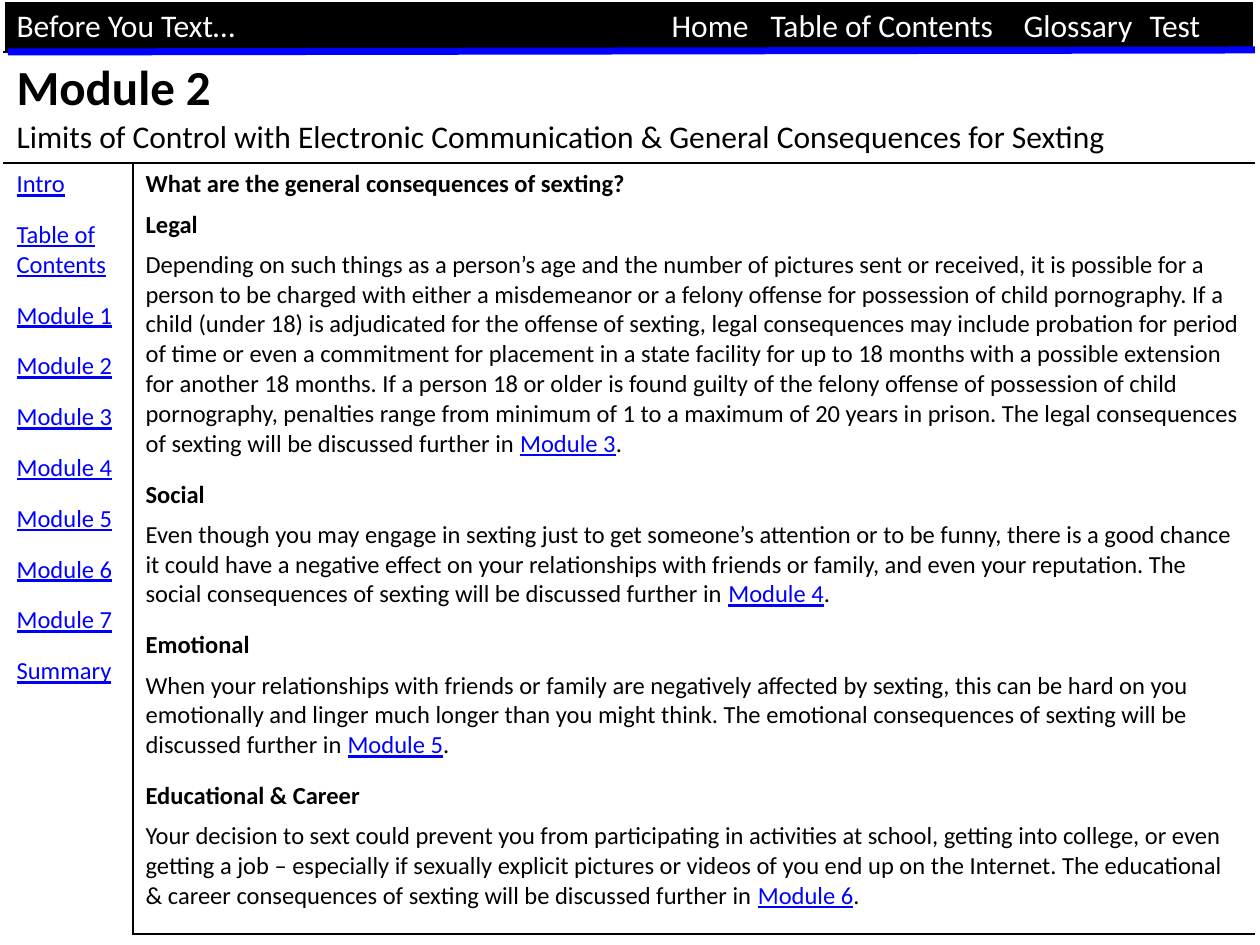
from lxml import etree
from pptx import Presentation
from pptx.dml.color import RGBColor
from pptx.enum.shapes import MSO_CONNECTOR
from pptx.oxml.ns import qn
from pptx.util import Pt

PX = 914400 // 126
STRAIGHT = MSO_CONNECTOR.STRAIGHT
BLACK = RGBColor(0, 0, 0)
WHITE = RGBColor(255, 255, 255)
BLUE = RGBColor(0, 0, 255)
FONT = "Calibri"

COLUMN_WIDTHS = (129, 1121)
ROW_HEIGHTS = (49, 106, 771)
HEADER = ("Before You Text…", "Home", "Table of Contents", "Glossary", "Test")
HEADER_STOPS = (655, 754, 1007, 1133)
SUBTITLE = "Limits of Control with Electronic Communication & General Consequences for Sexting"
MENU = ["Intro", "Table of Contents", *(f"Module {n}" for n in range(1, 8)), "Summary"]
QUESTION = "What are the general consequences of sexting?"
SECTIONS = (
    ("Legal", 6,
     "Depending on such things as a person’s age and the number of pictures sent or received, "
     "it is possible for a person to be charged with either a misdemeanor or a felony offense "
     "for possession of child pornography. If a child (under 18) is adjudicated for the offense "
     "of sexting, legal consequences may include probation for period of time or even a "
     "commitment for placement in a state facility for up to 18 months with a possible extension "
     "for another 18 months. If a person 18 or older is found guilty of the felony offense of "
     "possession of child pornography, penalties range from minimum of 1 to a maximum of 20 years "
     "in prison. The legal consequences of sexting will be discussed further in ", "Module 3"),
    ("Social", 12,
     "Even though you may engage in sexting just to get someone’s attention or to be funny, there "
     "is a good chance it could have a negative effect on your relationships with friends or "
     "family, and even your reputation. The social consequences of sexting will be discussed "
     "further in ", "Module 4"),
    ("Emotional", 12,
     "When your relationships with friends or family are negatively affected by sexting, this can "
     "be hard on you emotionally and linger much longer than you might think. The emotional "
     "consequences of sexting will be discussed further in ", "Module 5"),
    ("Educational & Career", 12,
     "Your decision to sext could prevent you from participating in activities at school, getting "
     "into college, or even getting a job – especially if sexually explicit pictures or videos of "
     "you end up on the Internet. The educational & career consequences of sexting will be "
     "discussed further in ", "Module 6"),
)


def px(length):
    return length * PX


def add_text(paragraph, text, size=14, color=BLACK, bold=False, underline=False):
    run = paragraph.add_run()
    run.text = text
    font = run.font
    font.name, font.size, font.bold, font.underline = FONT, Pt(size), bold, underline
    font.color.rgb = color


def add_link(paragraph, text):
    add_text(paragraph, text, color=BLUE, underline=True)


def next_paragraph(cell, space_before):
    paragraph = cell.text_frame.add_paragraph()
    paragraph.space_before = Pt(space_before)
    return paragraph


def set_tab_stops(paragraph, stops):
    properties = paragraph._p.get_or_add_pPr()
    tab_list = etree.SubElement(properties, qn("a:tabLst"))
    for stop in stops:
        etree.SubElement(tab_list, qn("a:tab"), pos=str(px(stop)), algn="l")


def set_borders(cell, left, right, top, bottom):
    properties = cell._tc.get_or_add_tcPr()
    sides = zip(("a:lnL", "a:lnR", "a:lnT", "a:lnB"), (left, right, top, bottom))
    for index, (side, color) in enumerate(sides):
        border = etree.Element(qn(side), w=str(Pt(1)))
        fill = etree.SubElement(border, qn("a:solidFill"))
        etree.SubElement(fill, qn("a:srgbClr"), val=str(color))
        properties.insert(index, border)


def add_page_table(slide):
    frame = slide.shapes.add_table(
        len(ROW_HEIGHTS), len(COLUMN_WIDTHS), px(4), px(1),
        px(sum(COLUMN_WIDTHS)), px(sum(ROW_HEIGHTS)))
    table = frame.table
    table.first_row = table.horz_banding = False
    for column, width in zip(table.columns, COLUMN_WIDTHS):
        column.width = px(width)
    for row, height in zip(table.rows, ROW_HEIGHTS):
        row.height = px(height)
    for cell in table.iter_cells():
        cell.fill.background()
    for row, top in ((0, WHITE), (1, BLACK)):
        table.cell(row, 0).merge(table.cell(row, 1))
        for column in range(2):
            set_borders(table.cell(row, column), WHITE, WHITE, top, BLACK)
    set_borders(table.cell(2, 0), WHITE, BLACK, BLACK, WHITE)
    set_borders(table.cell(2, 1), BLACK, WHITE, BLACK, BLACK)
    return table


def fill_header(cell):
    cell.fill.solid()
    cell.fill.fore_color.rgb = BLACK
    paragraph = cell.text_frame.paragraphs[0]
    set_tab_stops(paragraph, HEADER_STOPS)
    add_text(paragraph, "\t".join(HEADER), size=18, color=WHITE)


def fill_heading(cell):
    add_text(cell.text_frame.paragraphs[0], "Module 2", size=28, bold=True)
    add_text(next_paragraph(cell, 0), SUBTITLE, size=18)


def fill_menu(cell):
    first = cell.text_frame.paragraphs[0]
    first.space_before = Pt(12)
    add_link(first, MENU[0])
    for entry in MENU[1:]:
        add_link(next_paragraph(cell, 12), entry)


def fill_sections(cell):
    add_text(cell.text_frame.paragraphs[0], QUESTION, bold=True)
    for heading, gap, body, module in SECTIONS:
        add_text(next_paragraph(cell, gap), heading, bold=True)
        paragraph = next_paragraph(cell, 6)
        add_text(paragraph, body)
        add_link(paragraph, module)
        add_text(paragraph, ".")


def add_rule(slide, start, end):
    rule = slide.shapes.add_connector(STRAIGHT, *map(px, start), *map(px, end))
    rule.line.color.rgb = BLUE
    rule.line.width = Pt(4)
    etree.SubElement(rule._element.spPr, qn("a:effectLst"))


def main():
    deck = Presentation()
    deck.slide_width, deck.slide_height = px(1260), px(945)
    slide = deck.slides.add_slide(deck.slide_layouts[6])
    table = add_page_table(slide)
    fill_header(table.cell(0, 0))
    fill_heading(table.cell(1, 0))
    fill_menu(table.cell(2, 0))
    fill_sections(table.cell(2, 1))
    add_rule(slide, (8, 52), (1255, 50))
    deck.save("out.pptx")


if __name__ == "__main__":
    main()
